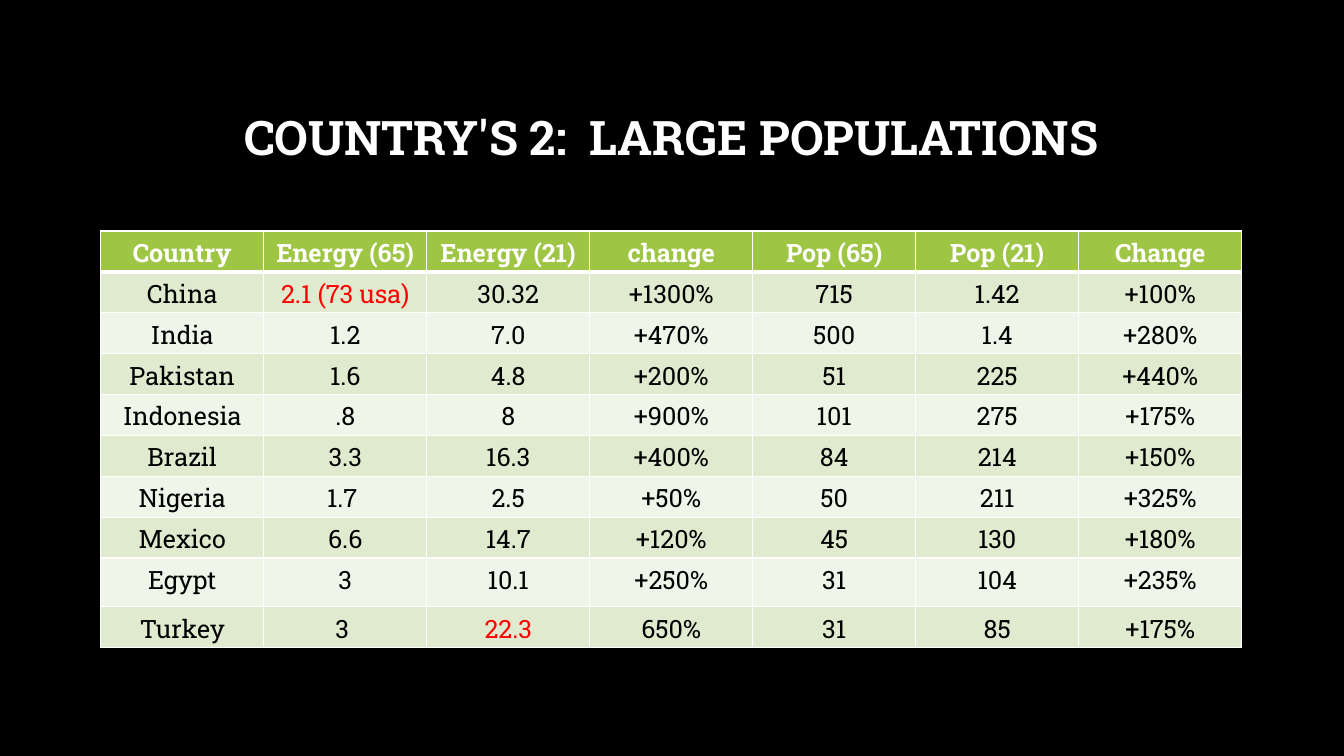
from lxml.etree import SubElement
from pptx import Presentation
from pptx.dml.color import RGBColor
from pptx.enum.text import MSO_ANCHOR, PP_ALIGN
from pptx.oxml.ns import qn
from pptx.util import Pt

# Content
HEADING = "COUNTRY'S 2:  LARGE POPULATIONS"
COLUMNS = ("Country", "Energy (65)", "Energy (21)", "change", "Pop (65)", "Pop (21)", "Change")
COUNTRIES = [
    ("China", "2.1 (73 usa)", "30.32", "+1300%", "715", "1.42", "+100%"),
    ("India", "1.2", "7.0", "+470%", "500", "1.4", "+280%"),
    ("Pakistan", "1.6", "4.8", "+200%", "51", "225", "+440%"),
    ("Indonesia", ".8", "8", "+900%", "101", "275", "+175%"),
    ("Brazil", "3.3", "16.3", "+400%", "84", "214", "+150%"),
    ("Nigeria", "1.7 ", "2.5", "+50%", "50", "211", "+325%"),
    ("Mexico", "6.6", "14.7", "+120%", "45", "130", "+180%"),
    ("Egypt", "3", "10.1", "+250%", "31", "104", "+235%"),
    ("Turkey", "3 ", "22.3", "650%", "31", "85", "+175%"),
]
HIGHLIGHTS = {"2.1 (73 usa)", "22.3"}

# Style
FONT = "Roboto Slab"
BLACK = RGBColor(0x00, 0x00, 0x00)
WHITE = RGBColor(0xFF, 0xFF, 0xFF)
RED = RGBColor(0xFF, 0x00, 0x00)
GREEN = RGBColor(0x9E, 0xC5, 0x44)
BANDS = (RGBColor(0xF0, 0xF5, 0xE9), RGBColor(0xDF, 0xEA, 0xCF))

# Layout
LEFT, WIDTH = 72, 815
HEADING_TOP, HEADING_HEIGHT = 48, 104.4
TABLE_TOP = 165
ROW_HEIGHT, EGYPT_HEIGHT = 29.2, 34.7


def set_text(paragraph, text, size, color, bold):
    paragraph.text = text
    paragraph.alignment = PP_ALIGN.CENTER
    font = paragraph.font
    font.name, font.size, font.bold = FONT, Pt(size), bold
    font.color.rgb = color


def add_border(cell, side, width):
    line = SubElement(cell._tc.get_or_add_tcPr(), qn(f"a:ln{side}"), w=str(Pt(width)))
    fill = SubElement(line, qn("a:solidFill"))
    SubElement(fill, qn("a:srgbClr"), val=str(WHITE))


# Slide
deck = Presentation()
deck.slide_width, deck.slide_height = Pt(960), Pt(540)
slide = deck.slides.add_slide(deck.slide_layouts[6])
slide.background.fill.solid()
slide.background.fill.fore_color.rgb = BLACK

# Heading
heading = slide.shapes.add_textbox(
    Pt(LEFT), Pt(HEADING_TOP), Pt(WIDTH), Pt(HEADING_HEIGHT)).text_frame
heading.word_wrap = True
heading.vertical_anchor = MSO_ANCHOR.MIDDLE
set_text(heading.paragraphs[0], HEADING, 34, WHITE, True)
heading.paragraphs[0].line_spacing = 0.9

# Country table
rows = [COLUMNS, *COUNTRIES]
heights = [EGYPT_HEIGHT if row[0] == "Egypt" else ROW_HEIGHT for row in rows]
table = slide.shapes.add_table(
    len(rows), len(COLUMNS), Pt(LEFT), Pt(TABLE_TOP), Pt(WIDTH), Pt(sum(heights))).table
for column in table.columns:
    column.width = Pt(WIDTH / len(COLUMNS))

for r, (row, height) in enumerate(zip(rows, heights)):
    table.rows[r].height = Pt(height)
    is_header = r == 0
    for c, text in enumerate(row):
        cell = table.cell(r, c)
        # Thick rule between the header and the first country
        borders = {"L": 1, "R": 1, "T": 3 if r == 1 else 1, "B": 3 if is_header else 1}
        for side, width in borders.items():
            add_border(cell, side, width)
        cell.fill.solid()
        cell.fill.fore_color.rgb = GREEN if is_header else BANDS[r % 2]
        color = WHITE if is_header else RED if text in HIGHLIGHTS else BLACK
        set_text(cell.text_frame.paragraphs[0], text, 18, color, is_header)

deck.save("out.pptx")
